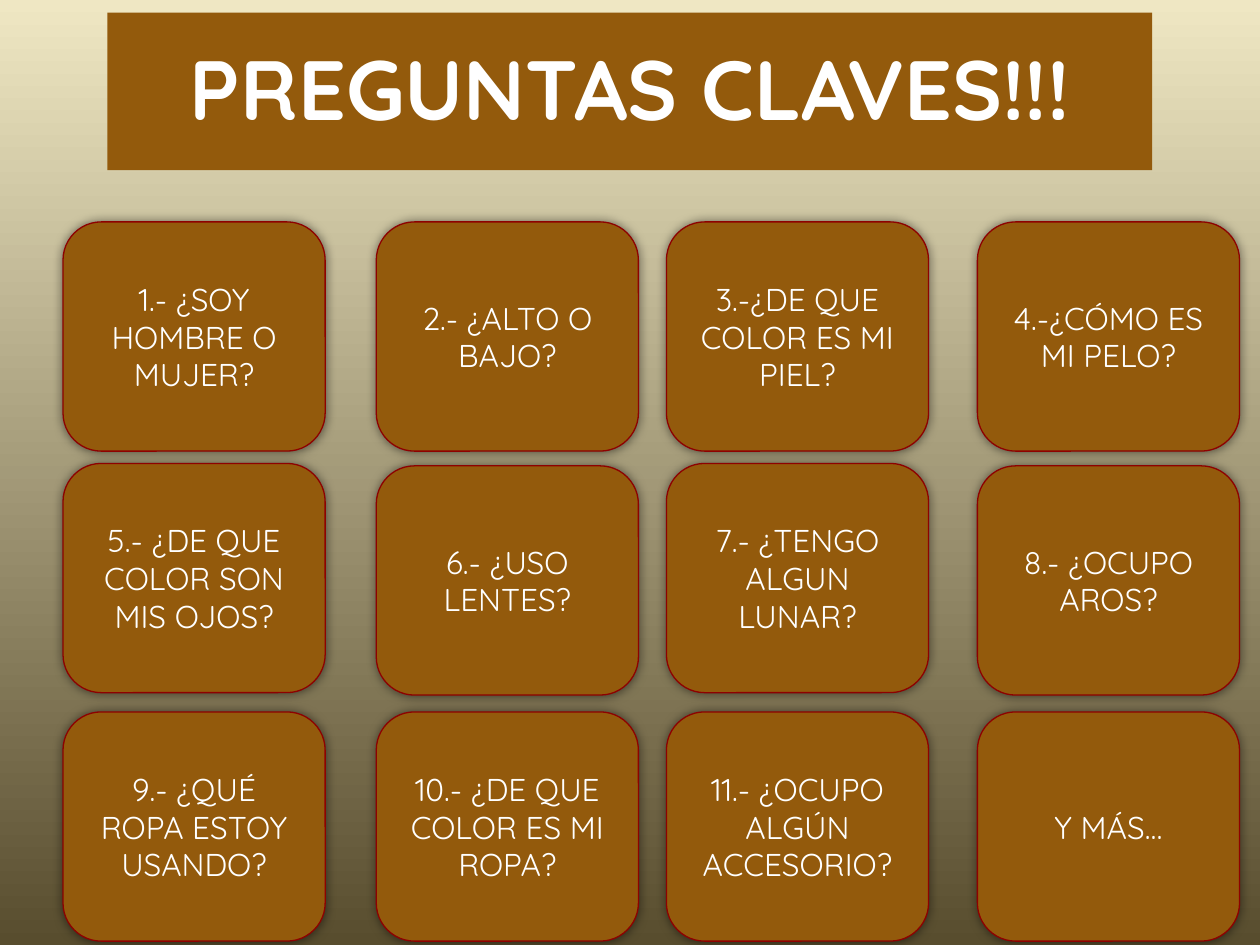
from lxml.etree import SubElement
from pptx import Presentation
from pptx.dml.color import RGBColor
from pptx.enum.shapes import MSO_SHAPE
from pptx.enum.text import MSO_ANCHOR, PP_ALIGN
from pptx.oxml.ns import qn
from pptx.util import Pt

COLORS = {
    "sky": "EFE7C3",
    "earth": "584D2E",
    "brown": "935A0C",
    "border": "8E0100",
    "text": "FFFFFF",
    "shadow": "000000",
}
FONT = "Quicksand"

CARD_WIDTH, CARD_HEIGHT = 149.8, 131
COLUMN_LEFTS = [36, 215, 380.8, 558.5]
# The even columns of the middle row sit slightly lower.
ROW_TOPS = [[126.8, 126.8], [264.8, 266.2], [406.8, 406.8]]
QUESTIONS = [
    ["1.- ¿SOY HOMBRE O MUJER?", "2.- ¿ALTO O BAJO?",
     "3.-¿DE QUE COLOR ES MI PIEL?", "4.-¿CÓMO ES MI PELO?"],
    ["5.- ¿DE QUE COLOR SON MIS OJOS?", "6.- ¿USO LENTES?",
     "7.- ¿TENGO ALGUN LUNAR?", "8.- ¿OCUPO AROS?"],
    ["9.- ¿QUÉ ROPA ESTOY USANDO?", "10.- ¿DE QUE COLOR ES MI ROPA?",
     "11.- ¿OCUPO ALGÚN ACCESORIO?", "Y MÁS…"],
]


def color(name):
    return RGBColor.from_string(COLORS[name])


def fill_brown(shape):
    shape.fill.solid()
    shape.fill.fore_color.rgb = color("brown")


def write_text(shape, text, size, bold=False, line_spacing=None):
    frame = shape.text_frame
    frame.word_wrap = True
    frame.vertical_anchor = MSO_ANCHOR.MIDDLE
    paragraph = frame.paragraphs[0]
    paragraph.alignment = PP_ALIGN.CENTER
    paragraph.line_spacing = line_spacing
    run = paragraph.add_run()
    run.text = text
    run.font.name = FONT
    run.font.size = Pt(size)
    run.font.bold = bold
    run.font.color.rgb = color("text")


def add_glow_shadow(shape, blur=6, opacity=50):
    """Give the shape a soft shadow that spreads evenly on all sides."""
    shape.shadow.inherit = False
    effects = shape._element.spPr.find(qn("a:effectLst"))
    shadow = SubElement(effects, qn("a:outerShdw"), blurRad=str(Pt(blur)),
                        dist="0", dir="0", algn="ctr", rotWithShape="0")
    shade = SubElement(shadow, qn("a:srgbClr"), val=COLORS["shadow"])
    SubElement(shade, qn("a:alpha"), val=str(opacity * 1000))


def paint_background(slide):
    fill = slide.background.fill
    fill.gradient()
    fill.gradient_angle = 270
    for stop, name, position in zip(fill.gradient_stops, ("sky", "earth"), (0, 1)):
        stop.color.rgb = color(name)
        stop.position = position


def place_title(slide, text):
    title = slide.shapes.title
    title.left, title.top = Pt(61.4), Pt(7.2)
    title.width, title.height = Pt(597), Pt(90)
    fill_brown(title)
    write_text(title, text, size=48, bold=True, line_spacing=0.95)


def add_card(slide, question, left, top):
    card = slide.shapes.add_shape(MSO_SHAPE.ROUNDED_RECTANGLE, Pt(left), Pt(top),
                                  Pt(CARD_WIDTH), Pt(CARD_HEIGHT))
    fill_brown(card)
    card.line.color.rgb = color("border")
    card.line.width = Pt(0.75)
    add_glow_shadow(card)
    write_text(card, question, size=18)


def main():
    presentation = Presentation()
    presentation.slide_width, presentation.slide_height = Pt(720), Pt(540)
    slide = presentation.slides.add_slide(presentation.slide_layouts[5])
    paint_background(slide)
    place_title(slide, "PREGUNTAS CLAVES!!!")
    for questions, tops in zip(QUESTIONS, ROW_TOPS):
        for column, (question, left) in enumerate(zip(questions, COLUMN_LEFTS)):
            add_card(slide, question, left, tops[column % 2])
    presentation.save("out.pptx")


if __name__ == "__main__":
    main()
